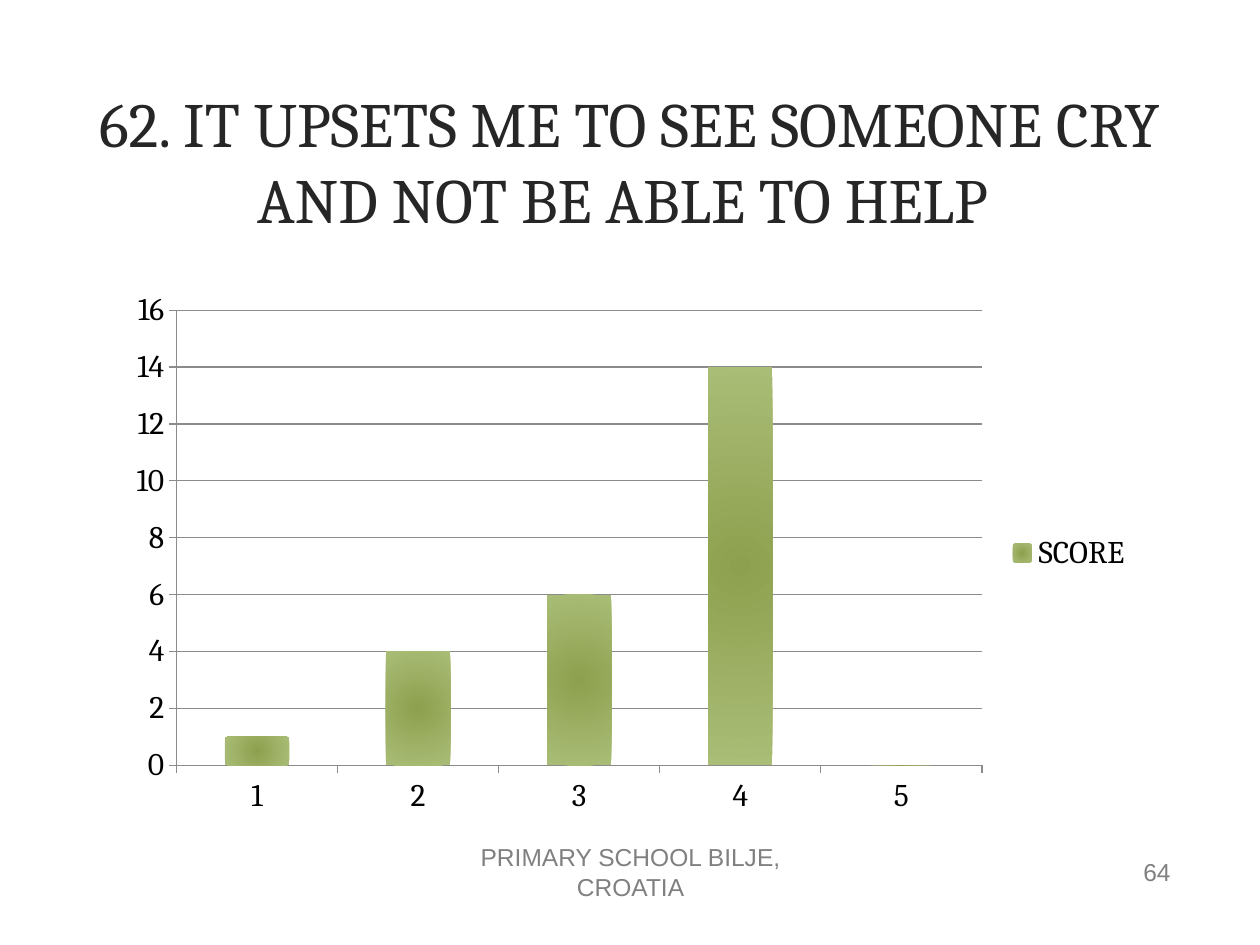
from dataclasses import dataclass

from lxml import etree
from pptx import Presentation
from pptx.chart.data import CategoryChartData
from pptx.dml.color import RGBColor
from pptx.enum import chart as ch, text
from pptx.oxml import ns
from pptx.util import Inches, Pt

DARK = RGBColor(0x26, 0x26, 0x26)
GRAY = RGBColor(0x80, 0x80, 0x80)
BLACK = RGBColor(0, 0, 0)
AXIS = RGBColor(0x8B, 0x8B, 0x8B)
GREEN = RGBColor(0x8D, 0xA0, 0x4F)
LIGHT_GREEN = RGBColor(0xAA, 0xBD, 0x76)


@dataclass(frozen=True)
class Label:
    words: str
    left: float
    top: float
    width: float
    height: float
    align: text.PP_ALIGN
    size: int
    font: str
    color: RGBColor


LABELS = [
    Label("62. IT UPSETS ME TO SEE SOMEONE CRY AND NOT BE ABLE TO HELP ",
          0.6, 0.48, 8.79, 1.58, text.PP_ALIGN.CENTER, 36, "Cambria", DARK),
    Label("PRIMARY SCHOOL BILJE, CROATIA",
          3.42, 6.72, 3.17, 0.4, text.PP_ALIGN.CENTER, 14, "Arial", GRAY),
    Label("64", 7.06, 6.72, 2.33, 0.4, text.PP_ALIGN.RIGHT, 14, "Arial", GRAY),
]


def style_font(font, name: str, size: int, color: RGBColor) -> None:
    font.name = name
    font.size = Pt(size)
    font.color.rgb = color


def add_label(s, label: Label) -> None:
    sp = s.shapes.add_textbox(Inches(label.left), Inches(label.top),
                              Inches(label.width), Inches(label.height))
    tf = sp.text_frame
    tf.word_wrap = True
    tf.vertical_anchor = text.MSO_ANCHOR.MIDDLE
    p = tf.paragraphs[0]
    p.text = label.words
    p.alignment = label.align
    style_font(p.runs[0].font, label.font, label.size, label.color)


def fill_radial(fmt, inner: RGBColor, outer: RGBColor) -> None:
    fmt.fill.gradient()
    stops = fmt.fill.gradient_stops
    for stop, color, position in zip(stops, (inner, outer), (0, 1)):
        stop.color.rgb = color
        stop.position = position
    grad = fmt._element.find(".//" + ns.qn("a:gradFill"))
    linear = grad.find(ns.qn("a:lin"))
    radial = etree.Element(ns.qn("a:path"), {"path": "circle"})
    etree.SubElement(radial, ns.qn("a:fillToRect"),
                     {side: "50000" for side in "ltrb"})
    grad.replace(linear, radial)


def add_score_chart(s) -> None:
    data = CategoryChartData()
    data.categories = ["1", "2", "3", "4", "5"]
    data.add_series("SCORE", [1, 4, 6, 14, 0])
    chart = s.shapes.add_chart(
        ch.XL_CHART_TYPE.COLUMN_CLUSTERED, Inches(0.92), Inches(2.23),
        Inches(8.17), Inches(4.32), data).chart
    style_font(chart.font, "Cambria", 18, BLACK)
    chart.has_title = False
    chart.has_legend = True
    chart.legend.position = ch.XL_LEGEND_POSITION.RIGHT
    chart.legend.include_in_layout = False

    plot = chart.plots[0]
    plot.gap_width = 150
    plot.vary_by_categories = False
    fill_radial(plot.series[0].format, GREEN, LIGHT_GREEN)

    value_axis = chart.value_axis
    value_axis.minimum_scale = 0
    value_axis.maximum_scale = 16
    value_axis.major_unit = 2
    value_axis.has_major_gridlines = True
    for part in (chart.category_axis, value_axis, value_axis.major_gridlines):
        part.format.line.color.rgb = AXIS
        part.format.line.width = Pt(0.75)
    for axis in (chart.category_axis, value_axis):
        axis.major_tick_mark = ch.XL_TICK_MARK.OUTSIDE


def main() -> None:
    prs = Presentation()
    prs.slide_width = Inches(10)
    prs.slide_height = Inches(7.5)
    s = prs.slides.add_slide(prs.slide_layouts[6])
    for label in LABELS:
        add_label(s, label)
    add_score_chart(s)
    prs.save("out.pptx")


if __name__ == "__main__":
    main()
